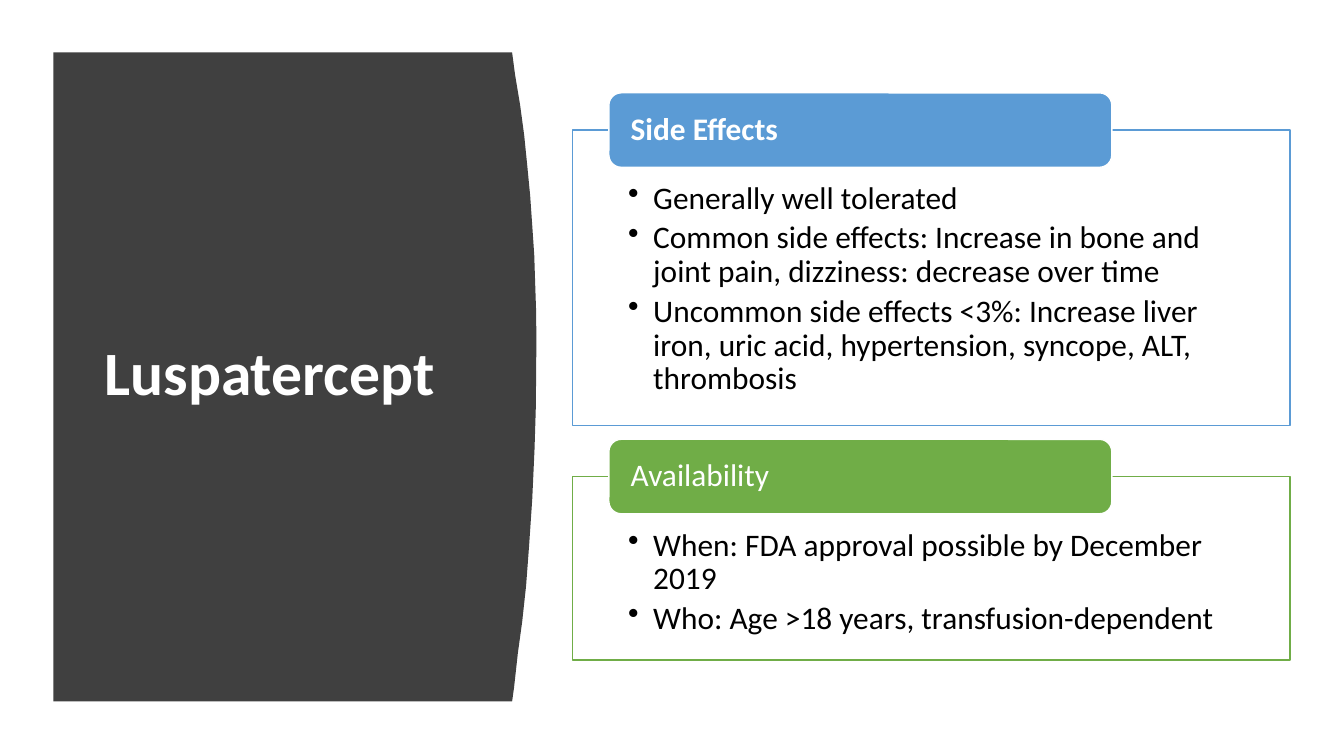
from dataclasses import dataclass

from lxml import etree
from pptx import Presentation
from pptx import util as u
from pptx.dml.color import RGBColor
from pptx.enum import shapes, text
from pptx.oxml import ns

COLORS = {
    "panel": "404040",
    "white": "FFFFFF",
    "black": "000000",
    "blue": "5B9BD5",
    "green": "70AD47",
}
FONT = "Calibri"
BODY_SIZE = 22.4
CARD_LEFT, CARD_WIDTH = 409, 512.6
HEADER_LEFT, HEADER_WIDTH, HEADER_HEIGHT = 434.9, 359.3, 53.2
PANEL_LEFT, PANEL_TOP, PANEL_BOTTOM = 38.2, 37.4, 501.1
PANEL_EDGE = [
    (365.8, 37.4), (367.9, 53.3), (371.5, 74.9), (374.4, 96.5),
    (376.6, 118.1), (378.7, 139.7), (380.2, 161.3), (381.6, 182.2),
    (382.3, 203), (383, 224), (383.1, 244.1), (383, 264.2),
    (382.7, 293), (381.8, 321.1), (380.2, 356.4), (378, 388.8),
    (375.8, 418.3), (373, 444.2), (369.9, 466.6), (367.2, 491),
    (365.8, 501.1),
]


@dataclass
class Card:
    heading: str
    bold: bool
    color: str
    top: float
    height: float
    bullets: list[str]


CARDS = [
    Card("Side Effects", True, "blue", 92.9, 211, [
        "Generally well tolerated",
        "Common side effects: Increase in bone and joint pain, dizziness: decrease over time",
        "Uncommon side effects <3%: Increase liver iron, uric acid, hypertension, syncope, ALT, thrombosis",
    ]),
    Card("Availability", False, "green", 340.4, 131, [
        "When: FDA approval possible by December 2019",
        "Who: Age >18 years, transfusion-dependent",
    ]),
]


def rgb(name: str) -> RGBColor:
    return RGBColor.from_string(COLORS[name])


def paint(shape, fill: str, line: str | None = None) -> None:
    shape.shadow.inherit = False
    shape.fill.solid()
    shape.fill.fore_color.rgb = rgb(fill)
    if line is None:
        shape.line.fill.background()
    else:
        shape.line.color.rgb = rgb(line)
        shape.line.width = u.Pt(1)


def set_frame(shape, anchor, side: float, top: float = 0, bottom: float = 0):
    frame = shape.text_frame
    frame.word_wrap = True
    frame.vertical_anchor = anchor
    frame.margin_left = frame.margin_right = u.Pt(side)
    frame.margin_top, frame.margin_bottom = u.Pt(top), u.Pt(bottom)
    return frame


def write(para, words: str, size: float, color: str, bold: bool = False) -> None:
    para.text = words
    para.alignment = text.PP_ALIGN.LEFT
    para.line_spacing = 0.9
    para.font.name = FONT
    para.font.size = u.Pt(size)
    para.font.bold = bold
    para.font.color.rgb = rgb(color)


def add_bullet(para) -> None:
    para.space_after = u.Pt(4)
    properties = para._p.get_or_add_pPr()
    properties.set("marL", str(u.Pt(18)))
    properties.set("indent", str(-u.Pt(18)))
    bullet = etree.SubElement(properties, ns.qn("a:buChar"))
    bullet.set("char", "•")
    defaults = properties.find(ns.qn("a:defRPr"))
    if defaults is not None:
        defaults.addprevious(bullet)


def draw_panel(page) -> None:
    builder = page.shapes.build_freeform(u.Pt(PANEL_LEFT), u.Pt(PANEL_TOP))
    edge = [(u.Pt(x), u.Pt(y)) for x, y in PANEL_EDGE]
    builder.add_line_segments(edge + [(u.Pt(PANEL_LEFT), u.Pt(PANEL_BOTTOM))])
    paint(builder.convert_to_shape(), "panel")


def draw_title(page) -> None:
    box = page.shapes.add_textbox(u.Pt(67.7), u.Pt(79.9), u.Pt(269.3), u.Pt(377.3))
    frame = set_frame(box, text.MSO_ANCHOR.MIDDLE, 7.2, 3.6, 3.6)
    write(frame.paragraphs[0], "Luspatercept", 44, "white", True)


def draw_card(page, card: Card) -> None:
    body = page.shapes.add_shape(
        shapes.MSO_SHAPE.RECTANGLE,
        u.Pt(CARD_LEFT), u.Pt(card.top), u.Pt(CARD_WIDTH), u.Pt(card.height),
    )
    paint(body, "white", card.color)
    fill_color = body.fill._xPr.find(f".//{ns.qn('a:srgbClr')}")
    etree.SubElement(fill_color, ns.qn("a:alpha")).set("val", "90000")
    frame = set_frame(body, text.MSO_ANCHOR.TOP, 39.6, 37.4, 13)
    for index, words in enumerate(card.bullets):
        para = frame.add_paragraph() if index else frame.paragraphs[0]
        write(para, words, BODY_SIZE, "black")
        add_bullet(para)

    header = page.shapes.add_shape(
        shapes.MSO_SHAPE.ROUNDED_RECTANGLE,
        u.Pt(HEADER_LEFT), u.Pt(card.top - HEADER_HEIGHT / 2),
        u.Pt(HEADER_WIDTH), u.Pt(HEADER_HEIGHT),
    )
    paint(header, card.color, "white")
    frame = set_frame(header, text.MSO_ANCHOR.MIDDLE, 13)
    write(frame.paragraphs[0], card.heading, BODY_SIZE, "white", card.bold)


def main() -> None:
    deck = Presentation()
    deck.slide_width, deck.slide_height = u.Pt(960), u.Pt(540)
    page = deck.slides.add_slide(deck.slide_layouts[6])
    draw_panel(page)
    draw_title(page)
    for card in CARDS:
        draw_card(page, card)
    deck.save("out.pptx")


if __name__ == "__main__":
    main()
